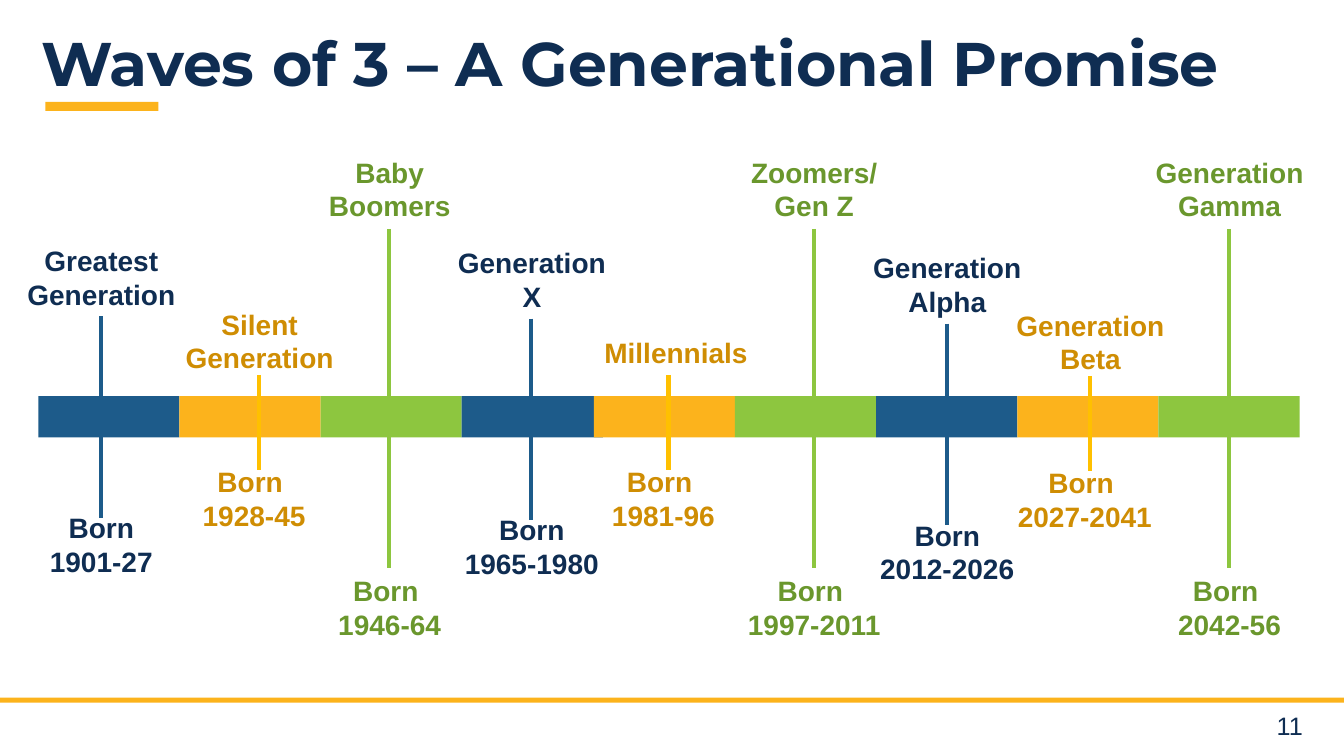
from lxml import etree
from pptx import Presentation
from pptx import util as u
from pptx.dml.color import RGBColor
from pptx.enum import shapes, text
from pptx.oxml.ns import qn

COLORS = {
    "navy": "0F2D52", "blue": "1D5B8A",
    "gold": "FCB31C", "gold line": "FFC000", "gold text": "CF8D03",
    "green": "8DC63F", "green text": "6A972D",
}

presentation = Presentation()
presentation.slide_width = u.Inches(13.33)
presentation.slide_height = u.Inches(7.5)
slide = presentation.slides.add_slide(presentation.slide_layouts[5])


def add_bar(left, top, width, height, color):
    bar = slide.shapes.add_shape(
        shapes.MSO_SHAPE.RECTANGLE,
        u.Inches(left), u.Inches(top), u.Inches(width), u.Inches(height))
    bar.shadow.inherit = False
    bar.fill.solid()
    bar.fill.fore_color.rgb = RGBColor.from_string(COLORS[color])
    bar.line.fill.background()


def add_label(lines, left, top, width, height, color,
              size=20, bold=True, align=text.PP_ALIGN.CENTER):
    box = slide.shapes.add_textbox(
        u.Inches(left), u.Inches(top), u.Inches(width), u.Inches(height))
    frame = box.text_frame
    frame.word_wrap = True
    for index, line in enumerate(lines):
        paragraph = frame.add_paragraph() if index else frame.paragraphs[0]
        paragraph.alignment = align
        run = paragraph.add_run()
        run.text = line
        run.font.name = "Arial"
        run.font.size = u.Pt(size)
        run.font.bold = bold
        run.font.color.rgb = RGBColor.from_string(COLORS[color])


# Footer rule, title underline and page number
add_bar(0, 6.92, 13.33, 0.05, "gold")
add_bar(0.45, 1.01, 1.12, 0.09, "gold")
add_label(["11"], 12.08, 7, 0.94, 0.35, "navy", 18, False, text.PP_ALIGN.RIGHT)

# Title
title = slide.shapes.title
title.left, title.top = u.Inches(0.31), u.Inches(0.24)
title.width, title.height = u.Inches(12.72), u.Inches(0.85)
title.text_frame.vertical_anchor = text.MSO_ANCHOR.MIDDLE
paragraph = title.text_frame.paragraphs[0]
paragraph.alignment = text.PP_ALIGN.LEFT
paragraph.line_spacing = 0.9
run = paragraph.add_run()
run.text = "Waves of 3 – A Generational Promise"
run.font.name = "Montserrat"
run.font.size = u.Pt(44)
run.font.bold = True
run.font.color.rgb = RGBColor.from_string(COLORS["navy"])

# The three waves: bar, line and text colours, line length,
# name height above the line, birth label offset, width and first line
waves = [
    ("blue", "blue", "navy", 2, 0.77, -0.12, 1.89, "Born"),
    ("gold", "gold line", "gold text", 0.94, 0.72, -0.1, 2.09, "Born "),
    ("green", "green", "green text", 3.37, 0.78, 0, 1.89, "Born "),
]

# Generations: name, birth years, line position, line top
generations = [
    (["Greatest Generation"], "1901-27", 1, 3.14),
    (["Silent Generation"], "1928-45", 2.57, 3.72),
    (["Baby Boomers"], "1946-64", 3.86, 2.27),
    (["Generation", "X"], "1965-1980", 5.27, 3.16),
    (["Millennials"], "1981-96", 6.63, 3.72),
    (["Zoomers/ Gen Z"], "1997-2011", 8.07, 2.27),
    (["Generation", "Alpha"], "2012-2026", 9.39, 3.21),
    (["Generation", "Beta"], "2027-2041", 10.81, 3.73),
    (["Generation Gamma"], "2042-56", 12.19, 2.27),
]

# Timeline band; the fifth segment onwards overlaps by a small step
for index in range(len(generations)):
    overlap = 0.09 if index >= 4 else 0
    add_bar(0.38 + 1.4 * index - overlap, 3.93, 1.4, 0.41, waves[index % 3][0])

# Marker line, name and birth years of each generation
for index, (name, years, center, top) in enumerate(generations):
    _, line_color, text_color, length, rise, drop, born_width, born = waves[index % 3]
    bottom = top + length
    marker = slide.shapes.add_connector(
        shapes.MSO_CONNECTOR.STRAIGHT,
        u.Inches(center), u.Inches(top), u.Inches(center), u.Inches(bottom))
    marker.line.color.rgb = RGBColor.from_string(COLORS[line_color])
    marker.line.width = u.Pt(3)
    etree.SubElement(marker._element.spPr, qn("a:effectLst"))

    name_left, name_height = center - 0.94, 0.77
    if name == ["Millennials"]:  # single-line name
        name_left, name_height, rise = 5.76, 0.44, 0.44
    add_label(name, name_left, top - rise, 1.89, name_height, text_color)
    add_label([born, years], center - 0.05 - born_width / 2 if born_width > 2 else center - 0.94,
              bottom + drop, born_width, 0.77, text_color)

presentation.save("out.pptx")
